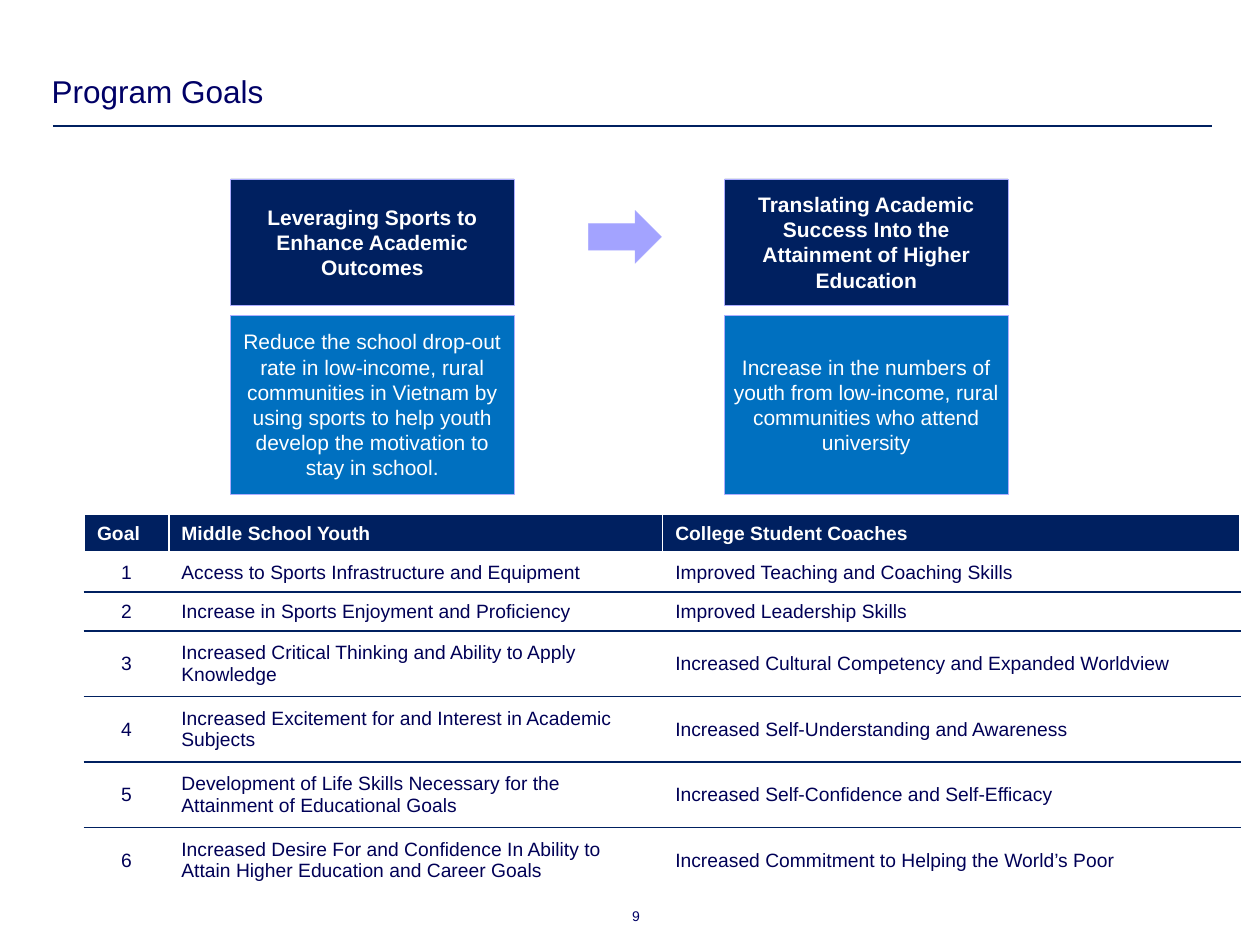
from typing import NamedTuple

from lxml import etree
from pptx import Presentation
from pptx.dml.color import RGBColor
from pptx.enum.shapes import MSO_CONNECTOR, MSO_SHAPE
from pptx.enum.text import MSO_ANCHOR, MSO_AUTO_SIZE, PP_ALIGN
from pptx.oxml.ns import qn
from pptx.util import Inches, Pt

LEFT, CENTER, RIGHT = PP_ALIGN.LEFT, PP_ALIGN.CENTER, PP_ALIGN.RIGHT
MIDDLE, BOTTOM = MSO_ANCHOR.MIDDLE, MSO_ANCHOR.BOTTOM
RECTANGLE, RIGHT_ARROW = MSO_SHAPE.RECTANGLE, MSO_SHAPE.RIGHT_ARROW
STRAIGHT, NO_AUTOFIT = MSO_CONNECTOR.STRAIGHT, MSO_AUTO_SIZE.NONE

FONT = "Arial"
COLORS = {
    "title": "000066",
    "body": "000056",
    "navy": "002060",
    "blue": "0070C0",
    "arrow": "A3A3FF",
    "outline": "ADADFF",
    "white": "FFFFFF",
}


class Theme(NamedTuple):
    left: float
    heading: str
    aim: str


class Border(NamedTuple):
    color: str
    width: float


THEMES = [
    Theme(
        1.83,
        "Leveraging Sports to Enhance Academic Outcomes",
        "Reduce the school drop-out rate in low-income, rural communities in Vietnam "
        "by using sports to help youth develop the motivation to stay in school.",
    ),
    Theme(
        5.75,
        "Translating Academic Success Into the Attainment of Higher Education",
        "Increase in the numbers of youth from low-income, rural communities "
        "who attend university",
    ),
]
HEADERS = ("Goal", "Middle School Youth", "College Student Coaches")
GOALS = [
    ("Access to Sports Infrastructure and Equipment",
     "Improved Teaching and Coaching Skills"),
    ("Increase in Sports Enjoyment and Proficiency",
     "Improved Leadership Skills"),
    ("Increased Critical Thinking and Ability to Apply Knowledge",
     "Increased Cultural Competency and Expanded Worldview"),
    ("Increased Excitement for and Interest in Academic Subjects",
     "Increased Self-Understanding and Awareness"),
    ("Development of Life Skills Necessary for the Attainment of Educational Goals",
     "Increased Self-Confidence and Self-Efficacy"),
    ("Increased Desire For and Confidence In Ability to Attain Higher Education "
     "and Career Goals",
     "Increased Commitment to Helping the World’s Poor"),
]
COLUMN_WIDTHS = (0.67, 3.92, 4.58)
ROW_HEIGHTS = (0.31,) * 3 + (0.52,) * 4
THIN_WHITE, THICK_WHITE = Border("white", 1), Border("white", 3)
RULE = Border("navy", 1)


def rgb(name: str) -> RGBColor:
    return RGBColor.from_string(COLORS[name])


def write(frame, text: str, size: float, color: str, align=LEFT, bold=False,
          anchor=MIDDLE, inset: float = 0.05):
    frame.word_wrap = True
    frame.auto_size = NO_AUTOFIT
    frame.vertical_anchor = anchor
    frame.margin_left = frame.margin_right = Inches(inset)
    frame.margin_top = frame.margin_bottom = Inches(inset)
    return write_paragraph(frame, text, size, color, align, bold)


def write_paragraph(frame, text: str, size: float, color: str, align, bold: bool):
    frame.text = text
    paragraph = frame.paragraphs[0]
    paragraph.alignment = align
    paragraph.font.name = FONT
    paragraph.font.size = Pt(size)
    paragraph.font.bold = bold
    paragraph.font.color.rgb = rgb(color)
    return paragraph


def add_filled_shape(slide, kind, left: float, top: float, width: float,
                     height: float, fill: str):
    shape = slide.shapes.add_shape(
        kind, Inches(left), Inches(top), Inches(width), Inches(height))
    shape.shadow.inherit = False
    shape.fill.solid()
    shape.fill.fore_color.rgb = rgb(fill)
    shape.line.color.rgb = rgb("outline")
    shape.line.width = Pt(0.25)
    return shape


def add_theme(slide, theme: Theme) -> None:
    heading = add_filled_shape(slide, RECTANGLE, theme.left, 1.42, 2.25, 1, "navy")
    write(heading.text_frame, theme.heading, 12, "white", CENTER, bold=True)
    aim = add_filled_shape(slide, RECTANGLE, theme.left, 2.5, 2.25, 1.42, "blue")
    write(aim.text_frame, theme.aim, 12, "white", CENTER)


def set_borders(cell, top: Border, bottom: Border) -> None:
    properties = cell._tc.get_or_add_tcPr()
    sides = {"L": THIN_WHITE, "R": THIN_WHITE, "T": top, "B": bottom}
    for side, border in sides.items():
        line = etree.SubElement(properties, qn(f"a:ln{side}"), w=str(Pt(border.width)))
        fill = etree.SubElement(line, qn("a:solidFill"))
        etree.SubElement(fill, qn("a:srgbClr"), val=COLORS[border.color])


def add_goal_table(slide) -> None:
    rows = [HEADERS] + [(str(number), *goal) for number, goal in enumerate(GOALS, 1)]
    table = slide.shapes.add_table(
        len(rows), len(HEADERS), Inches(0.67), Inches(4.08),
        Inches(sum(COLUMN_WIDTHS)), Inches(sum(ROW_HEIGHTS))).table
    for column, width in zip(table.columns, COLUMN_WIDTHS):
        column.width = Inches(width)
    for row, height in zip(table.rows, ROW_HEIGHTS):
        row.height = Inches(height)

    edges = [THIN_WHITE, THICK_WHITE] + [RULE] * (len(GOALS) - 1) + [THIN_WHITE]
    for row_index, texts in enumerate(rows):
        is_header = row_index == 0
        for column_index, text in enumerate(texts):
            cell = table.cell(row_index, column_index)
            set_borders(cell, edges[row_index], edges[row_index + 1])
            cell.fill.solid()
            cell.fill.fore_color.rgb = rgb("navy" if is_header else "white")
            cell.vertical_anchor = MIDDLE
            align = CENTER if column_index == 0 and not is_header else LEFT
            write_paragraph(cell.text_frame, text, 11,
                            "white" if is_header else "body", align, is_header)


def add_title(slide) -> None:
    title = slide.shapes.title
    title.left, title.top = Inches(0.36), Inches(0.54)
    title.width, title.height = Inches(8.63), Inches(0.39)
    paragraph = write(title.text_frame, "Program Goals", 18, "title", anchor=BOTTOM)
    paragraph.line_spacing = 0.95
    rule = slide.shapes.add_connector(
        STRAIGHT, Inches(0.42), Inches(1), Inches(9.62), Inches(1))
    rule.line.color.rgb = rgb("navy")
    rule.line.width = Pt(1.5)
    etree.SubElement(rule._element.spPr, qn("a:effectLst"))


def add_page_number(slide) -> None:
    box = slide.shapes.add_textbox(Inches(4.08), Inches(7.21), Inches(1), Inches(0.13))
    paragraph = write(box.text_frame, "9", 8, "title", RIGHT,
                      anchor=MSO_ANCHOR.TOP, inset=0)
    paragraph.line_spacing = 0.95


def main() -> None:
    presentation = Presentation()
    presentation.slide_width = Inches(10)
    presentation.slide_height = Inches(7.5)
    slide = presentation.slides.add_slide(presentation.slide_layouts[5])
    add_page_number(slide)
    add_title(slide)
    add_filled_shape(slide, RIGHT_ARROW, 4.67, 1.67, 0.58, 0.42, "arrow")
    for theme in THEMES:
        add_theme(slide, theme)
    add_goal_table(slide)
    presentation.save("out.pptx")


if __name__ == "__main__":
    main()
